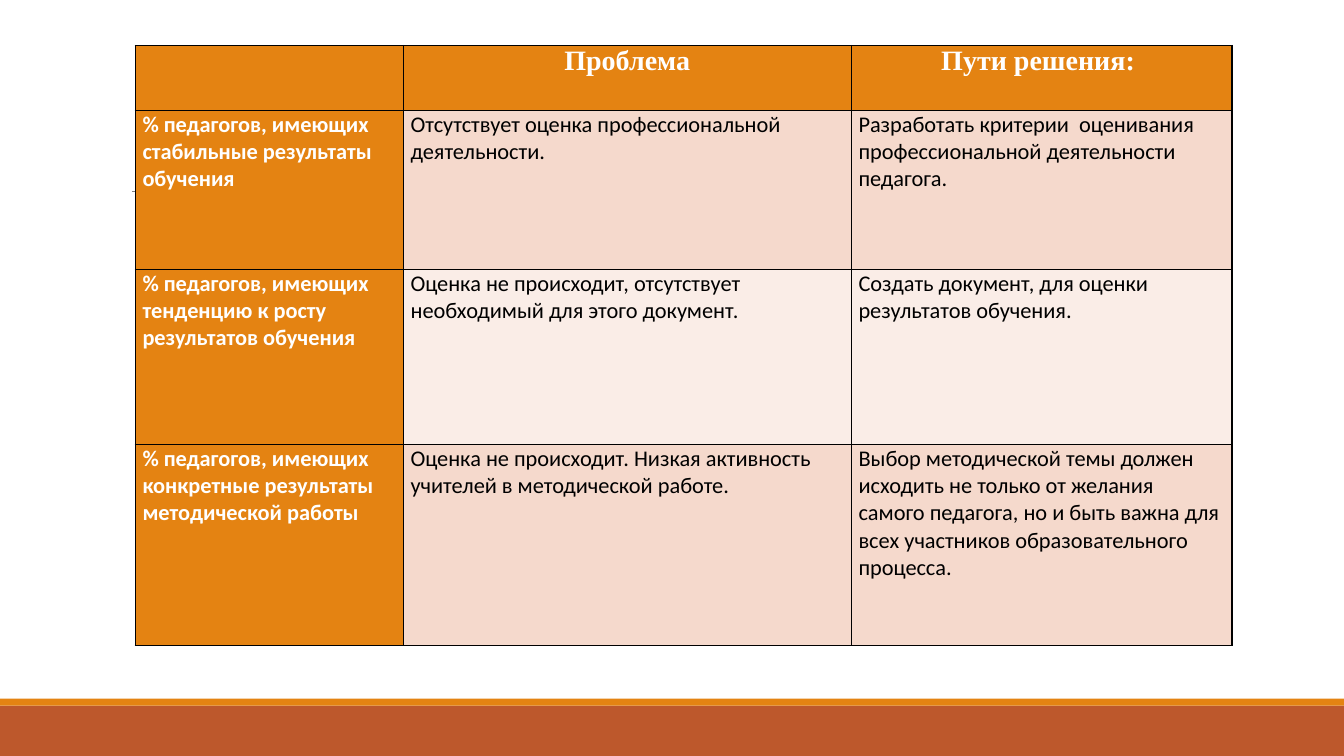
from lxml.etree import SubElement
from pptx import Presentation
from pptx.dml.color import RGBColor
from pptx.enum.shapes import MSO_CONNECTOR, MSO_SHAPE
from pptx.enum.text import PP_ALIGN
from pptx.oxml.ns import qn
from pptx.util import Pt

WIDTH, HEIGHT = 960, 540
ORANGE, RUST, GREY = "E48312", "BD582C", "808080"
WHITE, BLACK = "FFFFFF", "000000"
BANDS = ["F5D9CC", "FAEDE7"]

COLUMNS = [191.5, 320, 272]
ROW_HEIGHTS = [46.8, 113.5, 125, 143.5]
ROWS = [
    ["", "Проблема", "Пути решения: "],
    ["% педагогов, имеющих стабильные результаты обучения",
     "Отсутствует оценка профессиональной деятельности.",
     "Разработать критерии  оценивания профессиональной деятельности педагога."],
    ["% педагогов, имеющих тенденцию к росту результатов обучения",
     "Оценка не происходит, отсутствует необходимый для этого документ.",
     "Создать документ, для оценки результатов обучения."],
    ["% педагогов, имеющих конкретные результаты методической работы",
     "Оценка не происходит. Низкая активность учителей в методической работе.",
     "Выбор методической темы должен исходить не только от желания самого педагога, "
     "но и быть важна для всех участников образовательного процесса."],
]


def color(value):
    return RGBColor.from_string(value)


class Page:
    def __init__(self, slide):
        self.s = slide
        self.border = 1
        self.inset = 5.2

    def bar(self, top, height, fill):
        sp = self.s.shapes.add_shape(MSO_SHAPE.RECTANGLE, 0, Pt(top), Pt(WIDTH), Pt(height))
        sp.shadow.inherit = False
        sp.fill.solid()
        sp.fill.fore_color.rgb = color(fill)
        sp.line.fill.background()

    def rule(self, left, right, y):
        line = self.s.shapes.add_connector(
            MSO_CONNECTOR.STRAIGHT, Pt(left), Pt(y), Pt(right), Pt(y))
        line.line.color.rgb = color(GREY)
        line.line.width = Pt(0.5)
        SubElement(line._element.spPr, qn("a:effectLst"))

    def table(self, left, top, columns, heights, rows):
        tbl = self.s.shapes.add_table(
            len(rows), len(columns), Pt(left), Pt(top),
            Pt(sum(columns)), Pt(sum(heights))).table
        for column, width in zip(tbl.columns, columns):
            column.width = Pt(width)
        for i, (row, height) in enumerate(zip(rows, heights)):
            tbl.rows[i].height = Pt(height)
            for j, text in enumerate(row):
                self.cell(tbl.cell(i, j), text, i, j)

    def cell(self, cell, text, i, j):
        heading = i == 0 or j == 0
        cell.margin_left = cell.margin_right = Pt(self.inset)
        cell.margin_top = cell.margin_bottom = 0
        # Borders come before the fill in the cell properties
        tcPr = cell._tc.get_or_add_tcPr()
        for side in ("lnL", "lnR", "lnT", "lnB"):
            ln = SubElement(tcPr, qn(f"a:{side}"), w=str(Pt(self.border)))
            SubElement(SubElement(ln, qn("a:solidFill")), qn("a:srgbClr"), val=BLACK)
        cell.fill.solid()
        cell.fill.fore_color.rgb = color(ORANGE if heading else BANDS[(i - 1) % 2])
        p = cell.text_frame.paragraphs[0]
        p.text = text
        p.alignment = PP_ALIGN.CENTER if i == 0 else PP_ALIGN.LEFT
        p.font.name = "Times New Roman" if i == 0 else "Calibri"
        p.font.size = Pt(20 if i == 0 else 16)
        p.font.bold = heading
        p.font.color.rgb = color(WHITE if heading else BLACK)


def main():
    prs = Presentation()
    prs.slide_width, prs.slide_height = Pt(WIDTH), Pt(HEIGHT)
    page = Page(prs.slides.add_slide(prs.slide_layouts[6]))

    # Footer bands and rule
    page.bar(504, 36, RUST)
    page.bar(499, 5, ORANGE)
    page.rule(94.3, 879, 136.8)

    # Problems and solutions
    page.table(96.6, 32.4, COLUMNS, ROW_HEIGHTS, ROWS)

    prs.save("out.pptx")


if __name__ == "__main__":
    main()
